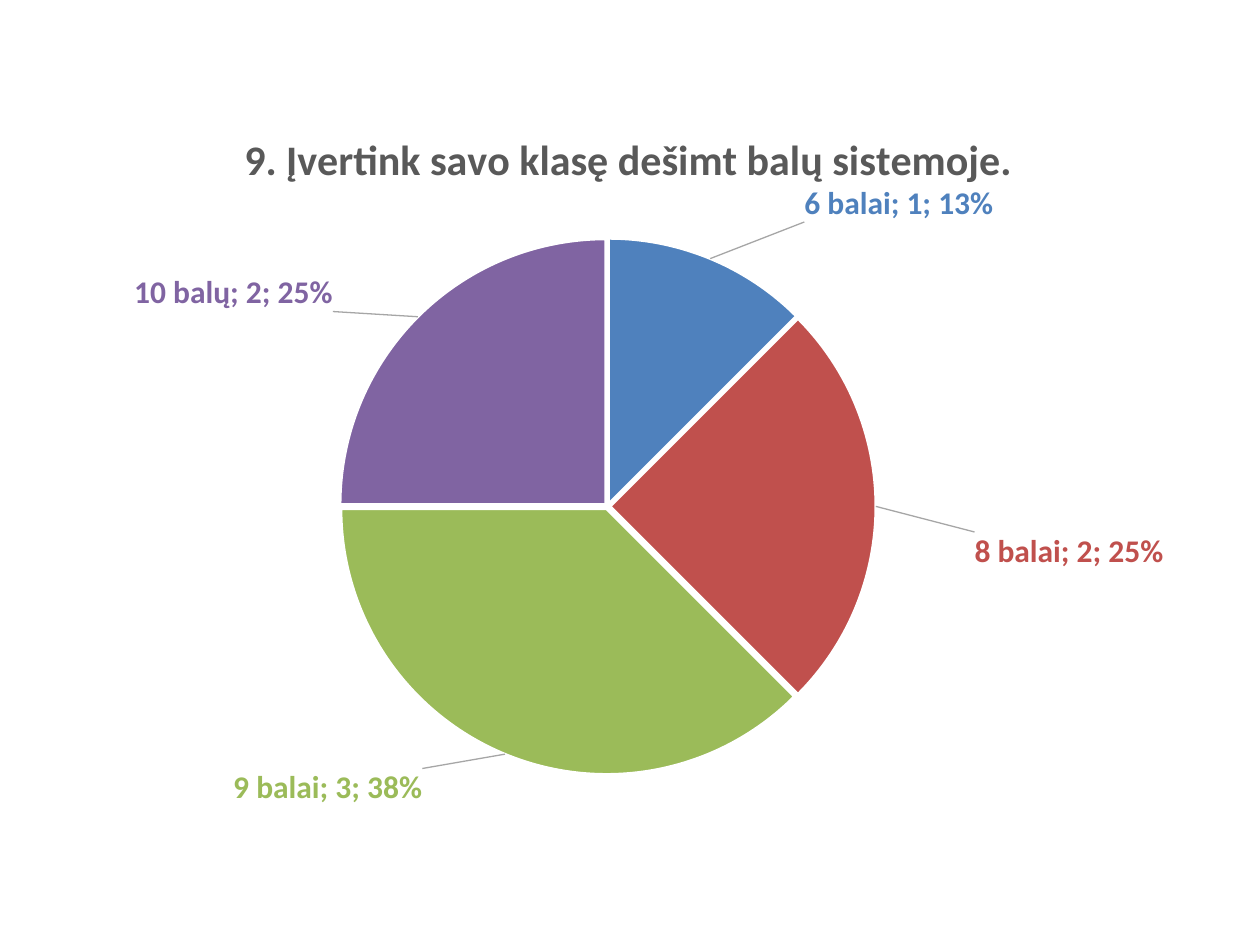
from lxml.etree import fromstring
from pptx import Presentation
from pptx.chart.data import CategoryChartData
from pptx.dml.color import RGBColor
from pptx.enum.chart import XL_CHART_TYPE as ChartType, XL_LABEL_POSITION as LabelPosition
from pptx.oxml.ns import nsdecls, qn
from pptx.util import Cm, Pt


def style_font(font, size, color, bold=True):
    font.name, font.size, font.bold = "Calibri", Pt(size), bold
    font.color.rgb = RGBColor.from_string(color)


def set_layout(before, settings):
    """Put a manual layout, in fractions of the chart, ahead of an element."""
    parent = before.getparent()
    for old in parent.findall(qn("c:layout")):
        parent.remove(old)
    values = "".join(f'<c:{key} val="{value}"/>' for key, value in settings.items())
    before.addprevious(fromstring(
        f'<c:layout {nsdecls("c")}><c:manualLayout>{values}</c:manualLayout></c:layout>'))


question = "9. Įvertink savo klasę dešimt balų sistemoje."
# Score, votes, colour, label offset from the slice edge
scores = [
    ("6 balai", 1, "4F81BD", (0.08, -0.04)),
    ("8 balai", 2, "C0504D", (0.08, 0.06)),
    ("9 balai", 3, "9BBB59", (-0.07, 0.01)),
    ("10 balų", 2, "8064A2", (-0.07, 0)),
]

prs = Presentation()
prs.slide_width, prs.slide_height = Cm(25.4), Cm(19.05)
slide = prs.slides.add_slide(prs.slide_layouts[6])

votes = CategoryChartData()
votes.categories = [score[0] for score in scores]
votes.add_series(question, [score[1] for score in scores])
chart = slide.shapes.add_chart(
    ChartType.PIE, Cm(1.09), Cm(1.73), Cm(23.01), Cm(15.01), votes).chart
style_font(chart.font, 10, "000000", bold=False)
chart.has_legend = False

# Heading and pie position
chart.has_title = True
heading = chart.chart_title.text_frame.paragraphs[0].add_run()
heading.text = question
style_font(heading.font, 24, "595959")
chart.chart_title.include_in_layout = False
title_xml = chart.chart_title._element
set_layout(title_xml.find(qn("c:overlay")),
           {"xMode": "edge", "yMode": "edge", "x": 0.16, "y": 0.05})

pie = chart.plots[0]
pie.vary_by_categories = True
set_layout(pie._element,
           {"layoutTarget": "inner", "xMode": "edge", "yMode": "edge",
            "x": 0.25, "y": 0.2, "w": 0.47, "h": 0.73})

# Shared label settings
answers = pie.series[0]
labels = answers.data_labels
labels.show_value = labels.show_category_name = labels.show_percentage = True
labels.position = LabelPosition.OUTSIDE_END
style_font(labels.font, 18, scores[0][2])

# Slices, each with a label in its own colour
for index, (_, _, color, (dx, dy)) in enumerate(scores):
    point = answers.points[index]
    point.format.fill.solid()
    point.format.fill.fore_color.rgb = RGBColor.from_string(color)
    point.format.line.color.rgb = RGBColor.from_string("FFFFFF")
    point.format.line.width = Pt(1.5)
    style_font(point.data_label.font, 18, color)
    point.data_label.position = LabelPosition.OUTSIDE_END

separator = f'<c:separator {nsdecls("c")}>; </c:separator>'
labels_xml = answers._element.find(qn("c:dLbls"))
for label, score in zip(labels_xml.findall(qn("c:dLbl")), scores):
    for flag in ("c:showVal", "c:showCatName", "c:showPercent"):
        label.find(qn(flag)).set("val", "1")
    label.find(qn("c:showBubbleSize")).addnext(fromstring(separator))
    dx, dy = score[3]
    set_layout(label.find(qn("c:idx")).getnext(), {"x": dx, "y": dy})
labels_xml.find(qn("c:showBubbleSize")).addnext(fromstring(separator))

# Leader lines and the small gap between slices
for old in labels_xml.findall(qn("c:showLeaderLines")):
    labels_xml.remove(old)
labels_xml.append(fromstring(f'<c:showLeaderLines {nsdecls("c")} val="1"/>'))
labels_xml.append(fromstring(
    f'<c:leaderLines {nsdecls("c", "a")}><c:spPr><a:ln w="9525"><a:solidFill>'
    '<a:srgbClr val="A6A6A6"/></a:solidFill></a:ln></c:spPr></c:leaderLines>'))
answers._element.find(qn("c:dPt")).addprevious(
    fromstring(f'<c:explosion {nsdecls("c")} val="1"/>'))

prs.save("out.pptx")
